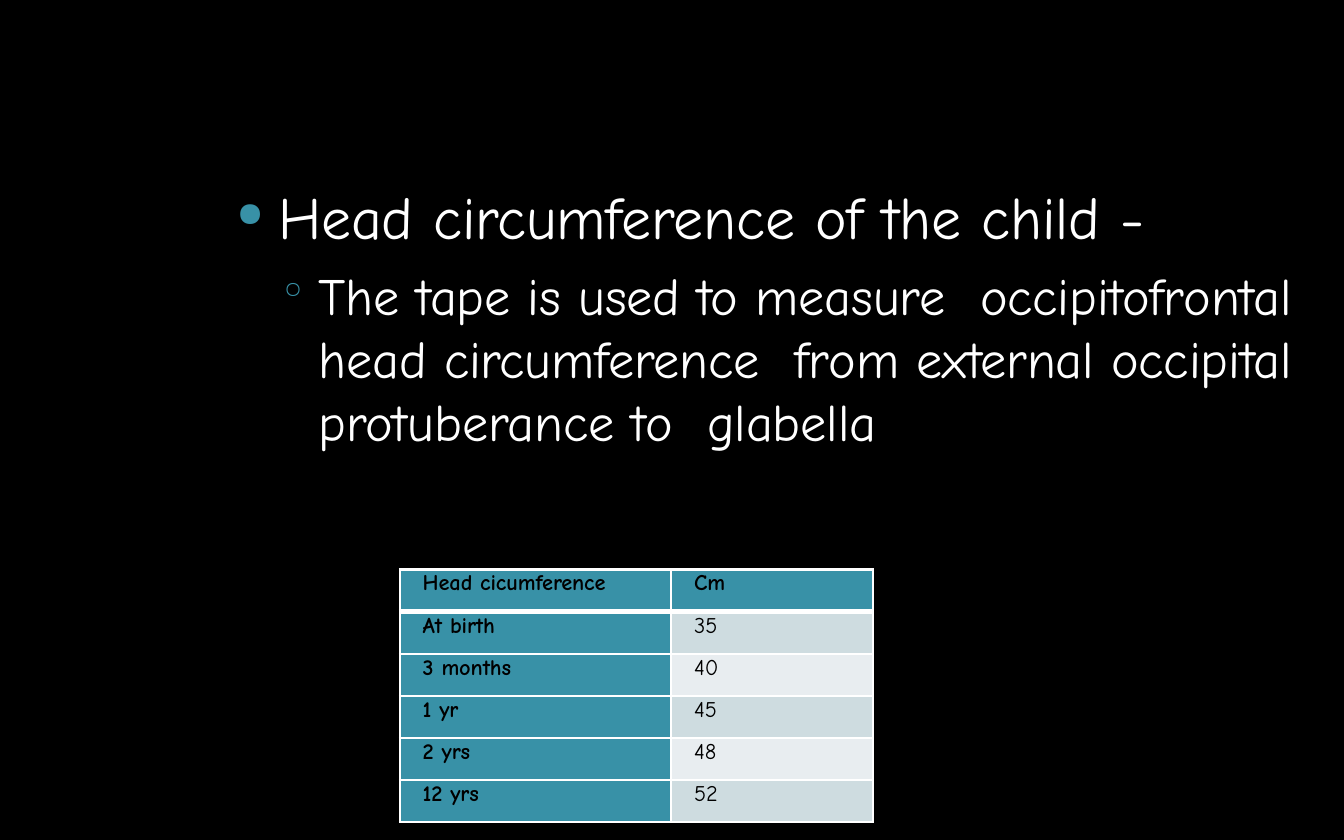
from dataclasses import dataclass
from typing import Optional

from lxml import etree
from pptx import Presentation
from pptx.dml.color import RGBColor
from pptx.enum.text import MSO_ANCHOR
from pptx.oxml.ns import qn
from pptx.util import Inches, Pt

WIDE, HIGH = 10, 6.25
GRID = 100  # columns and rows on the slide
FONT = "Comic Neue"
BLACK = RGBColor(0, 0, 0)
WHITE = RGBColor(255, 255, 255)
TEAL = RGBColor(0x38, 0x91, 0xA7)
BANDS = (RGBColor(0xCE, 0xDC, 0xE0), RGBColor(0xE8, 0xED, 0xF0))
TOP = MSO_ANCHOR.TOP
THIN, THICK = 1.25, 3


@dataclass
class Bullet:
    char: str
    left: float
    hang: float
    share: int


@dataclass
class Point:
    text: str
    size: int
    gap: float
    bullet: Bullet
    level: int = 0


POINTS = (
    Point("Head circumference of the child -", 32, 0, Bullet("●", 0.32, 0.31, 57)),
    Point("The tape is used to measure  occipitofrontal head circumference  "
          "from external occipital protuberance to  glabella",
          28, 6.2, Bullet("◦", 0.62, 0.3, 72), 1),
)
ROWS = (
    ("Head cicumference", "Cm"),
    ("At birth", "35"),
    ("3 months", "40"),
    ("1 yr", "45"),
    ("2 yrs", "48"),
    ("12 yrs", "52"),
)


def across(cols: float) -> int:
    return Inches(WIDE * cols / GRID)


def down(rows: float) -> int:
    return Inches(HIGH * rows / GRID)


def add(root, tag: str, **attrs):
    return etree.SubElement(root, qn(tag), {k: str(v) for k, v in attrs.items()})


def mark(props, bullet: Bullet) -> None:
    """Give a paragraph its hanging bullet and tab stop."""
    props.set("indent", str(Inches(-bullet.hang)))
    add(add(props, "a:buClr"), "a:srgbClr", val=TEAL)
    add(props, "a:buSzPct", val=bullet.share * 1000)
    add(props, "a:buChar", char=bullet.char)
    add(add(props, "a:tabLst"), "a:tab", pos=Inches(bullet.left), algn="l")


def write(para, text: str, *, size: int, color: RGBColor, left: float,
          bold: bool = False, gap: float = 0, level: int = 0,
          bullet: Optional[Bullet] = None) -> None:
    para.level = level
    props = para._p.get_or_add_pPr()
    props.set("marL", str(Inches(left)))
    props.set("indent", "0")
    if bullet:
        mark(props, bullet)
    para.space_before = Pt(gap)
    run = para.add_run()
    run.text = text
    font = run.font
    font.name, font.size, font.bold = FONT, Pt(size), bold
    font.color.rgb = color
    run._r.get_or_add_rPr().set("spc", "-5")


def edge(cell, side: str, width: float) -> None:
    line = add(cell._tc.get_or_add_tcPr(), f"a:ln{side}", w=Pt(width))
    add(add(line, "a:solidFill"), "a:srgbClr", val=WHITE)


def rule(row: int) -> float:
    """Width of the line above a row; the one below the header is heavy."""
    return THICK if row == 1 else THIN


def fill(cell, text: str, row: int, col: int) -> None:
    head = row == 0 or col == 0
    cell.margin_left = cell.margin_right = cell.margin_bottom = 0
    cell.margin_top = Inches(0.01)
    cell.vertical_anchor = TOP
    for side, width in (("L", THIN), ("R", THIN), ("T", rule(row)), ("B", rule(row + 1))):
        edge(cell, side, width)
    cell.fill.solid()
    cell.fill.fore_color.rgb = TEAL if head else BANDS[(row - 1) % 2]
    write(cell.text_frame.paragraphs[0], text, size=12, color=BLACK,
          left=0.17, bold=head)


def draw_points(slide) -> None:
    box = slide.shapes.add_textbox(across(17.5), down(19.7), across(78.7), down(41.8))
    frame = box.text_frame
    frame.word_wrap = True
    frame.margin_left = frame.margin_right = frame.margin_bottom = 0
    frame.margin_top = Inches(0.11)
    for i, point in enumerate(POINTS):
        para = frame.add_paragraph() if i else frame.paragraphs[0]
        write(para, point.text, size=point.size, color=WHITE, gap=point.gap,
              level=point.level, left=point.bullet.left, bullet=point.bullet)


def draw_table(slide) -> None:
    table = slide.shapes.add_table(len(ROWS), 2, across(29.75), down(67.8),
                                   across(35.2), down(30.1)).table
    table.columns[0].width = across(20.2)
    table.columns[1].width = across(15)
    for r, texts in enumerate(ROWS):
        for c, text in enumerate(texts):
            fill(table.cell(r, c), text, r, c)


def main() -> None:
    deck = Presentation()
    deck.slide_width, deck.slide_height = Inches(WIDE), Inches(HIGH)
    slide = deck.slides.add_slide(deck.slide_layouts[6])
    # Background
    back = slide.background.fill
    back.solid()
    back.fore_color.rgb = BLACK
    # Content
    draw_points(slide)
    draw_table(slide)
    deck.save("out.pptx")


if __name__ == "__main__":
    main()
